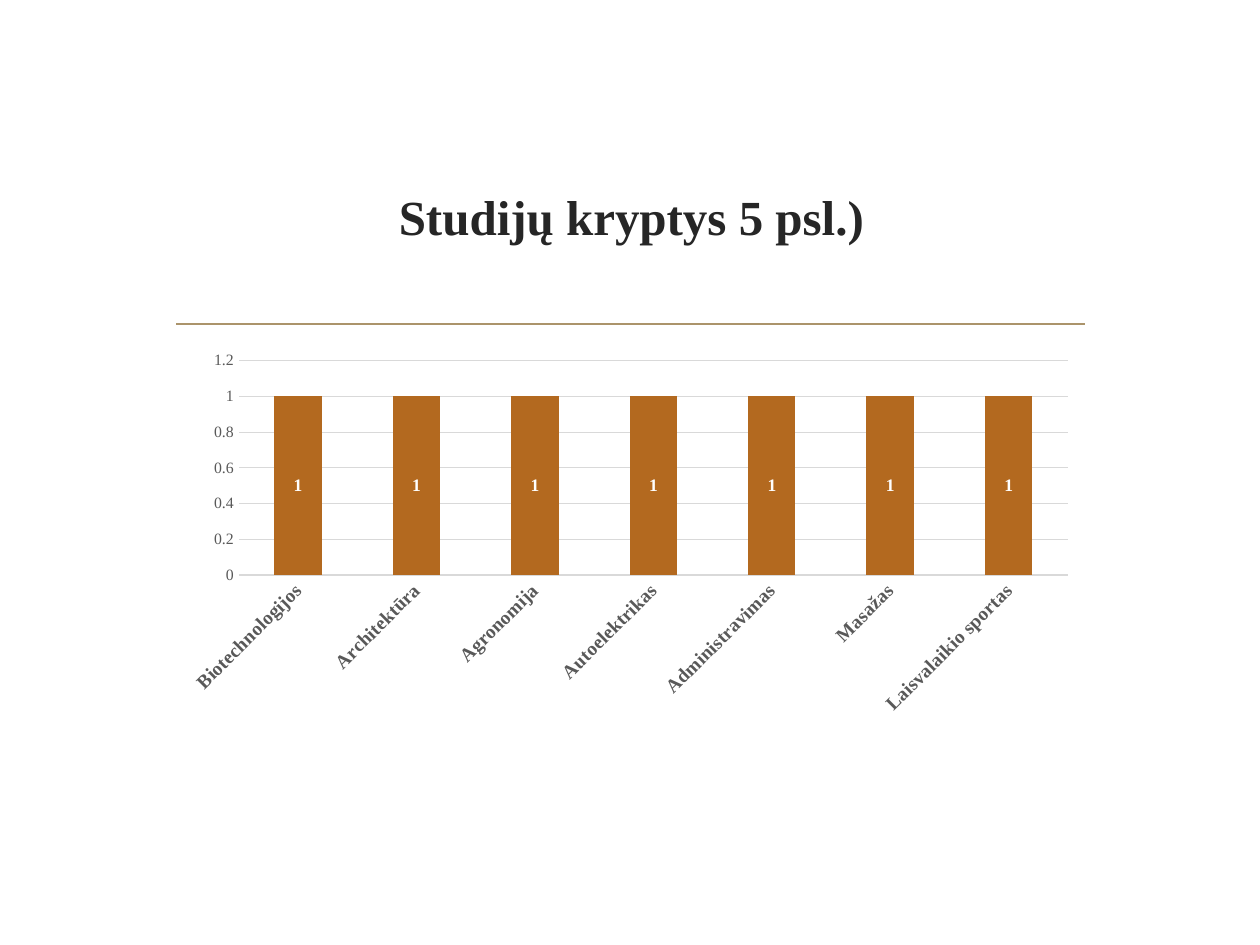
from pptx import Presentation
from pptx.chart.data import CategoryChartData
from pptx.dml.color import RGBColor
from pptx.enum import chart as charts, shapes, text
from pptx.oxml.ns import qn
from pptx.util import Inches, Pt
from lxml import etree

TITLE = "Studijų kryptys 5 psl.)"
SERIES = "Series 1"
FIELDS = {
    "Biotechnologijos": 1,
    "Architektūra": 1,
    "Agronomija": 1,
    "Autoelektrikas": 1,
    "Administravimas": 1,
    "Masažas": 1,
    "Laisvalaikio sportas": 1,
}
FONT = "Times New Roman"
COLORS = {
    "title": "262626", "rule": "AB946B", "bar": "B3691F", "value": "FFFFFF",
    "axis": "595959", "grid": "D9D9D9", "chart": "000000",
}


def color(name):
    return RGBColor.from_string(COLORS[name])


def style(font, size, name, bold=False):
    font.name, font.size, font.bold = FONT, Pt(size), bold
    font.color.rgb = color(name)


def add_rule(page):
    rule = page.shapes.add_connector(
        shapes.MSO_CONNECTOR.STRAIGHT,
        Inches(1.4), Inches(2.57), Inches(8.61), Inches(2.57))
    rule.line.color.rgb = color("rule")
    rule.line.width = Pt(1.25)
    etree.SubElement(rule._element.spPr, qn("a:effectLst"))


def add_title(page):
    box = page.shapes.add_textbox(Inches(1.29), Inches(1), Inches(7.44), Inches(1.43))
    frame = box.text_frame
    frame.word_wrap = True
    frame.vertical_anchor = text.MSO_ANCHOR.MIDDLE
    para = frame.paragraphs[0]
    para.alignment = text.PP_ALIGN.CENTER
    span = para.add_run()
    span.text = TITLE
    style(span.font, 28, "title", bold=True)


def add_fields_chart(page):
    data = CategoryChartData()
    data.categories = list(FIELDS)
    data.add_series(SERIES, list(FIELDS.values()))
    chart = page.shapes.add_chart(
        charts.XL_CHART_TYPE.COLUMN_STACKED,
        Inches(1.38), Inches(2.73), Inches(7.24), Inches(3), data).chart
    chart.has_legend = False
    chart.has_title = False
    style(chart.font, 10, "chart")

    for axis, size, bold in ((chart.category_axis, 11, True), (chart.value_axis, 9, False)):
        axis.major_tick_mark = axis.minor_tick_mark = charts.XL_TICK_MARK.NONE
        axis.format.line.fill.background()
        style(axis.tick_labels.font, size, "axis", bold)
    slanted = chart.category_axis._element.find(qn("c:txPr")).find(qn("a:bodyPr"))
    slanted.set("rot", str(-45 * 60000))
    slanted.set("vert", "horz")

    chart.value_axis.has_major_gridlines = True
    grid = chart.value_axis.major_gridlines.format.line
    grid.color.rgb = color("grid")
    grid.width = Pt(0.75)

    plot = chart.plots[0]
    plot.gap_width, plot.overlap, plot.vary_by_categories = 150, 100, False
    bars = plot.series[0]
    bars.format.fill.solid()
    bars.format.fill.fore_color.rgb = color("bar")
    labels = bars.data_labels
    labels.show_value = True
    labels.position = charts.XL_LABEL_POSITION.CENTER
    style(labels.font, 10, "value", bold=True)


def main():
    deck = Presentation()
    deck.slide_width, deck.slide_height = Inches(10), Inches(7.5)
    page = deck.slides.add_slide(deck.slide_layouts[6])
    add_rule(page)
    add_title(page)
    add_fields_chart(page)
    deck.save("out.pptx")


if __name__ == "__main__":
    main()
